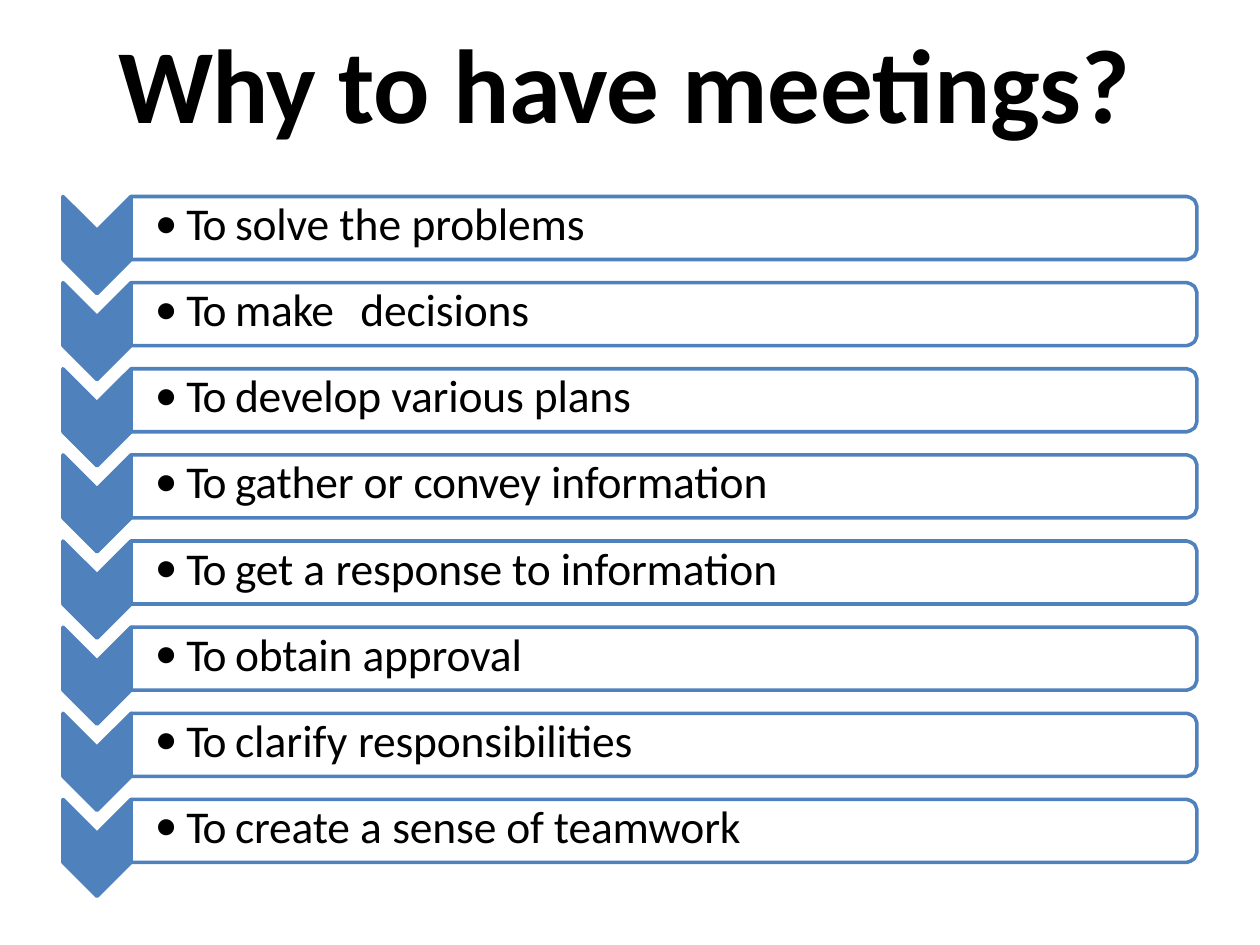
from pptx import Presentation
from pptx.dml.color import RGBColor
from pptx.enum.text import MSO_ANCHOR
from pptx.oxml.ns import qn
from pptx.util import Inches, Pt
from lxml.etree import SubElement

FONT = "Calibri"
BLUE, WHITE, BLACK = "4F81BC", "FFFFFF", "000000"
ROW_PITCH = 4.785 / 7

# Each run is its text and its letter spacing in points
TITLE = [("Why ", -0.5), ("to ", -0.3), ("have ", -0.4), ("meetings?", -0.1)]
REASONS = [
    [("solve ", -0.1), ("the ", 0), ("problems", -0.1)],
    [("make\t", -0.2), ("decisions", -0.1)],
    [("develop various plans", -0.1)],
    [("gather or ", -0.1), ("convey ", -0.2), ("information", -0.1)],
    [("get ", -0.1), ("a ", 0), ("response to information", -0.1)],
    [("obtain approval", -0.1)],
    [("clarify ", 0), ("responsibilities", -0.1)],
    [("create ", -0.1), ("a ", 0), ("sense of teamwork", -0.1)],
]


def color(hex_string):
    return RGBColor.from_string(hex_string)


def add_runs(p, runs, size, bold=False):
    for text, spacing in runs:
        r = p.add_run()
        r.text = text
        r.font.name = FONT
        r.font.size = Pt(size)
        r.font.bold = bold
        r.font.color.rgb = color(BLACK)
        r.font._element.set("spc", str(round(spacing * 100)))


def add_text_frame(slide, left, top, width, height, inset_top):
    sp = slide.shapes.add_textbox(Inches(left), Inches(top), Inches(width), Inches(height))
    tf = sp.text_frame
    tf.word_wrap = True
    tf.vertical_anchor = MSO_ANCHOR.TOP
    tf.margin_left = tf.margin_right = tf.margin_bottom = 0
    tf.margin_top = Inches(inset_top)
    return tf


def add_polygon(slide, points, fill):
    corners = [(Inches(x), Inches(y)) for x, y in points]
    builder = slide.shapes.build_freeform(*corners[0])
    builder.add_line_segments(corners[1:], close=True)
    sp = builder.convert_to_shape()
    sp.shadow.inherit = False
    sp.fill.solid()
    sp.fill.fore_color.rgb = color(fill)
    sp.line.color.rgb = color(BLUE)
    sp.line.width = Pt(2.04)


def add_bullet(p, tabs):
    pPr = p._p.get_or_add_pPr()
    pPr.set("marL", str(Inches(0.26)))
    pPr.set("indent", str(Inches(-0.25)))
    SubElement(pPr, qn("a:buFont"), typeface=FONT)
    SubElement(pPr, qn("a:buChar"), char="•")
    tab_list = SubElement(pPr, qn("a:tabLst"))
    for position in tabs:
        SubElement(tab_list, qn("a:tab"), pos=str(Inches(position)), algn="l")


def add_title(slide, left, top, width, height):
    tf = add_text_frame(slide, left, top, width, height, 0.01)
    p = tf.paragraphs[0]
    p.space_before = Pt(1)
    add_runs(p, TITLE, 60, bold=True)


def add_row(slide, left, top, width, height):
    arrow_w, notch = 0.54, 0.27
    x, right, bottom = left + arrow_w, left + width, top + height

    # Downward chevron
    middle = left + arrow_w / 2
    add_polygon(slide, [(left, top), (middle, top + notch), (x, top), (x, bottom),
                        (middle, bottom + notch), (left, bottom)], BLUE)

    # Bar with rounded right corners: distances from the right and outer edges
    curve = [(0.08, 0), (0.05, 0.01), (0.02, 0.03), (0.01, 0.05), (0, 0.08)]
    upper = [(right - dx, top + dy) for dx, dy in curve]
    lower = [(right - dx, bottom - dy) for dx, dy in reversed(curve)]
    add_polygon(slide, [(x, top), *upper, *lower, (x, bottom)], WHITE)


def add_reasons(slide, left, top, width, height):
    tf = add_text_frame(slide, left, top, width, height, 0.26)
    for i, runs in enumerate(REASONS):
        p = tf.paragraphs[0] if i == 0 else tf.add_paragraph()
        p.space_before = Pt(18 if i else 19)
        has_tab = any("\t" in text for text, _ in runs)
        add_bullet(p, [0.26, 1.64] if has_tab else [0.26])
        add_runs(p, [("To ", -1.1), *runs], 26)


def main():
    prs = Presentation()
    prs.slide_width, prs.slide_height = Inches(10), Inches(7.5)
    slide = prs.slides.add_slide(prs.slide_layouts[6])
    add_title(slide, 0.94, 0.14, 8.12, 1.03)
    for i in range(len(REASONS)):
        add_row(slide, 0.5, 1.56 + i * ROW_PITCH, 9, 0.5)
    add_reasons(slide, 1.22, 1.29, 5.03, 5.49)
    prs.save("out.pptx")


if __name__ == "__main__":
    main()
